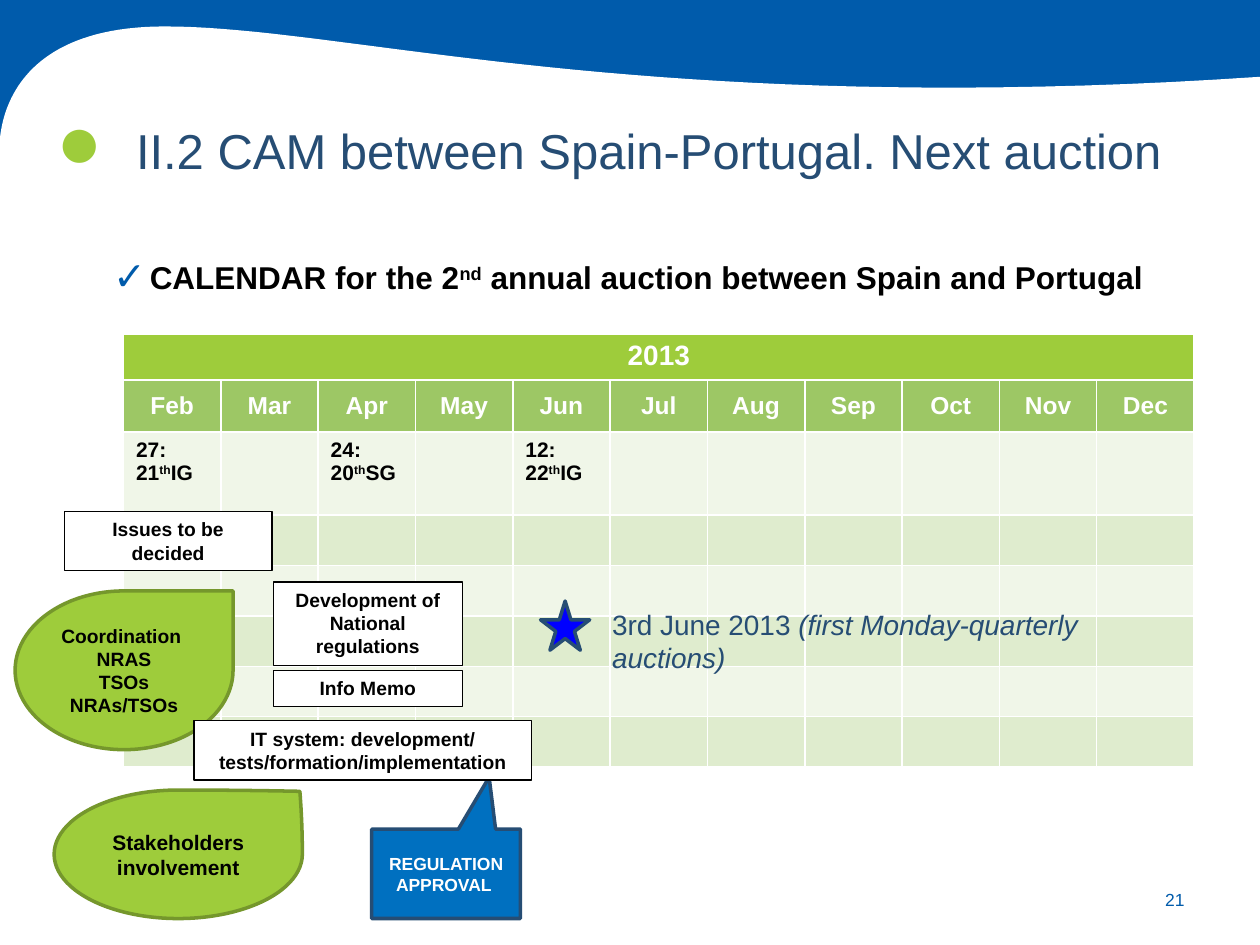
from lxml import etree
from pptx import Presentation
from pptx.dml.color import RGBColor
from pptx.enum.shapes import MSO_SHAPE
from pptx.enum.text import MSO_ANCHOR, PP_ALIGN
from pptx.oxml.ns import qn
from pptx.util import Inches, Pt

LEFT, MID, RIGHT, JUST = PP_ALIGN.LEFT, PP_ALIGN.CENTER, PP_ALIGN.RIGHT, PP_ALIGN.JUSTIFY
TOP, CENTER, BOTTOM = MSO_ANCHOR.TOP, MSO_ANCHOR.MIDDLE, MSO_ANCHOR.BOTTOM
RECT, TEAR, STAR = MSO_SHAPE.RECTANGLE, MSO_SHAPE.TEAR, MSO_SHAPE.STAR_5_POINT
CALL = MSO_SHAPE.RECTANGULAR_CALLOUT

HEX = {
    "blue": "005BAB", "navy": "264D74", "lime": "9ECC3B", "olive": "75972C",
    "white": "FFFFFF", "black": "000000", "month": "9DC765", "pale": "F0F6E8",
    "mint": "DFECCE", "star": "0000FF", "call": "0070C0",
}
RGB = {name: RGBColor.from_string(code) for name, code in HEX.items()}


def write(frame, lines, size, color, bold=False, align=LEFT, anchor=TOP):
    frame.word_wrap = True
    frame.vertical_anchor = anchor
    for i, line in enumerate(lines):
        para = frame.add_paragraph() if i else frame.paragraphs[0]
        para.alignment = align
        for part in [line] if isinstance(line, str) else line:
            para.add_run().text = part
        for run in para.runs:
            run.font.name = "Arial"
            run.font.size = Pt(size)
            run.font.bold = bold
            run.font.color.rgb = RGB[color]
            if run.text in ("nd", "th"):
                run.font._element.set("baseline", "30000")
    return frame.paragraphs[0]


def draw(kind, box, fill, edge, width):
    shape = slide.shapes.add_shape(kind, *map(Inches, box))
    shape.shadow.inherit = False
    shape.fill.solid()
    shape.fill.fore_color.rgb = RGB[fill]
    if edge:
        shape.line.color.rgb = RGB[edge]
        shape.line.width = Pt(width)
    else:
        shape.line.fill.background()
    return shape


prs = Presentation()
prs.slide_width, prs.slide_height = Inches(10), Inches(7.5)
slide = prs.slides.add_slide(prs.slide_layouts[6])

draw(RECT, (0, 0, 10, 1.15), "blue", None, 0)
curves = [
    [(0, 1.1), (0.03, 0.8), (0.23, 0.21), (1.31, 0.21)],
    [(1.31, 0.21), (2.76, 0.21), (5.1, 0.94), (10, 0.61)],
]
points = []
for a, b, c, d in curves:
    for step in range(1, 41):
        t = step / 40
        u = 1 - t
        points.append([
            Inches(u**3 * p + 3 * u * u * t * q + 3 * u * t * t * r + t**3 * s)
            for p, q, r, s in zip(a, b, c, d)
        ])
points += [(Inches(10), Inches(3.92)), (0, Inches(3.92))]
pen = slide.shapes.build_freeform(0, Inches(1.1))
pen.add_line_segments(points)
wave = pen.convert_to_shape()
wave.shadow.inherit = False
wave.fill.solid()
wave.fill.fore_color.rgb = RGB["white"]
wave.line.fill.background()

texts = [
    ((8.94, 6.94, 0.56, 0.4), ["21"], 10, "blue", False, RIGHT, CENTER),
    ((0.35, 0.57, 0.55, 0.94), ["●"], 44, "lime", False, MID, BOTTOM),
    ((0.98, 0.68, 8.57, 0.74), ["II.2 CAM between Spain-Portugal. Next auction"],
     28, "navy", False, LEFT, BOTTOM),
    ((0.2, 1.94, 9.49, 4.75),
     [["CALENDAR for the 2", "nd", " annual auction between Spain and Portugal"]],
     18, "black", True, JUST, TOP),
]
frames = []
for box, *style in texts:
    frame = slide.shapes.add_textbox(*map(Inches, box)).text_frame
    write(frame, *style)
    frames.append(frame)

title, body = frames[2:]
title.margin_left = title.margin_right = title.margin_top = title.margin_bottom = 0
title.paragraphs[0].space_after = Pt(2)
for frame, margin in ((title, 0.39), (body, 0.89)):
    para = frame.paragraphs[0]
    para.line_spacing = 1.2
    props = para._p.get_or_add_pPr()
    props.set("marL", str(Inches(margin)))
    props.set("indent", str(Inches(-0.29)))
tint = etree.SubElement(props, qn("a:buClr"))
etree.SubElement(tint, qn("a:srgbClr"), val=HEX["blue"])
etree.SubElement(props, qn("a:buSzPct"), val="125000")
etree.SubElement(props, qn("a:buFont"), typeface="Arial")
etree.SubElement(props, qn("a:buChar"), char="✓")

months = "Feb Mar Apr May Jun Jul Aug Sep Oct Nov Dec".split()
dates = {0: ["27: 21", "th", "IG"], 2: ["24: 20", "th", "SG"], 4: ["12: 22", "th", "IG"]}
highs = [0.36, 0.41, 0.66] + [0.38] * 5
fills = ["lime", "month"] + ["pale", "mint"] * 3
table = slide.shapes.add_table(
    len(highs), len(months), Inches(0.98), Inches(2.65), Inches(8.5), Inches(sum(highs))
).table
for i, (high, fill) in enumerate(zip(highs, fills)):
    table.rows[i].height = Inches(high)
    for cell in table.rows[i].cells:
        cell.fill.solid()
        cell.fill.fore_color.rgb = RGB[fill]
table.cell(0, 0).merge(table.cell(0, len(months) - 1))
write(table.cell(0, 0).text_frame, ["2013"], 16, "white", True, MID)
for j, month in enumerate(months):
    cell = table.cell(1, j)
    write(cell.text_frame, [month], 14, "white", True, MID)
    cell.vertical_anchor = CENTER
for j, date in dates.items():
    write(table.cell(2, j).text_frame, [date], 12, "black", True)

leaf = (TEAR, "lime", "olive", 2, "black", CENTER)
note = (RECT, "white", "black", 0.75, "black", TOP)
call = (CALL, "call", "navy", 2, "white", CENTER)
star = (STAR, "star", "navy", 2, "white", CENTER)
items = [
    (leaf, (0.43, 6.27, 1.97, 1.02), ["Stakeholders involvement"], 12, [0.98]),
    (note, (0.51, 4.06, 1.65, 0.47), ["Issues to be decided"], 11, []),
    (note, (2.17, 4.62, 1.5, 0.66), ["Development of National regulations"], 11, []),
    (note, (2.17, 5.32, 1.5, 0.29), ["Info Memo"], 11, []),
    (leaf, (0.12, 4.69, 1.73, 1.26), ["Coordination ", "NRAS", "TSOs", "NRAs/TSOs"], 11, []),
    (star, (4.29, 4.77, 0.39, 0.39), [], 11, []),
    (call, (2.95, 6.58, 1.18, 0.71), ["REGULATION APPROVAL "], 10, [0.29, -1.08]),
    (note, (1.54, 5.72, 2.68, 0.47),
     ["IT system: development/ tests/formation/implementation"], 11, []),
]
for (kind, fill, edge, width, color, anchor), box, lines, size, bends in items:
    shape = draw(kind, box, fill, edge, width)
    for i, bend in enumerate(bends):
        shape.adjustments[i] = bend
    write(shape.text_frame, lines, size, color, True, MID, anchor)

label = slide.shapes.add_textbox(Inches(4.76), Inches(4.77), Inches(4.17), Inches(0.64))
first = write(label.text_frame, [["3rd June 2013 ", "(first Monday-quarterly auctions)"]],
              16, "navy")
first.runs[1].font.italic = True

prs.save("out.pptx")
